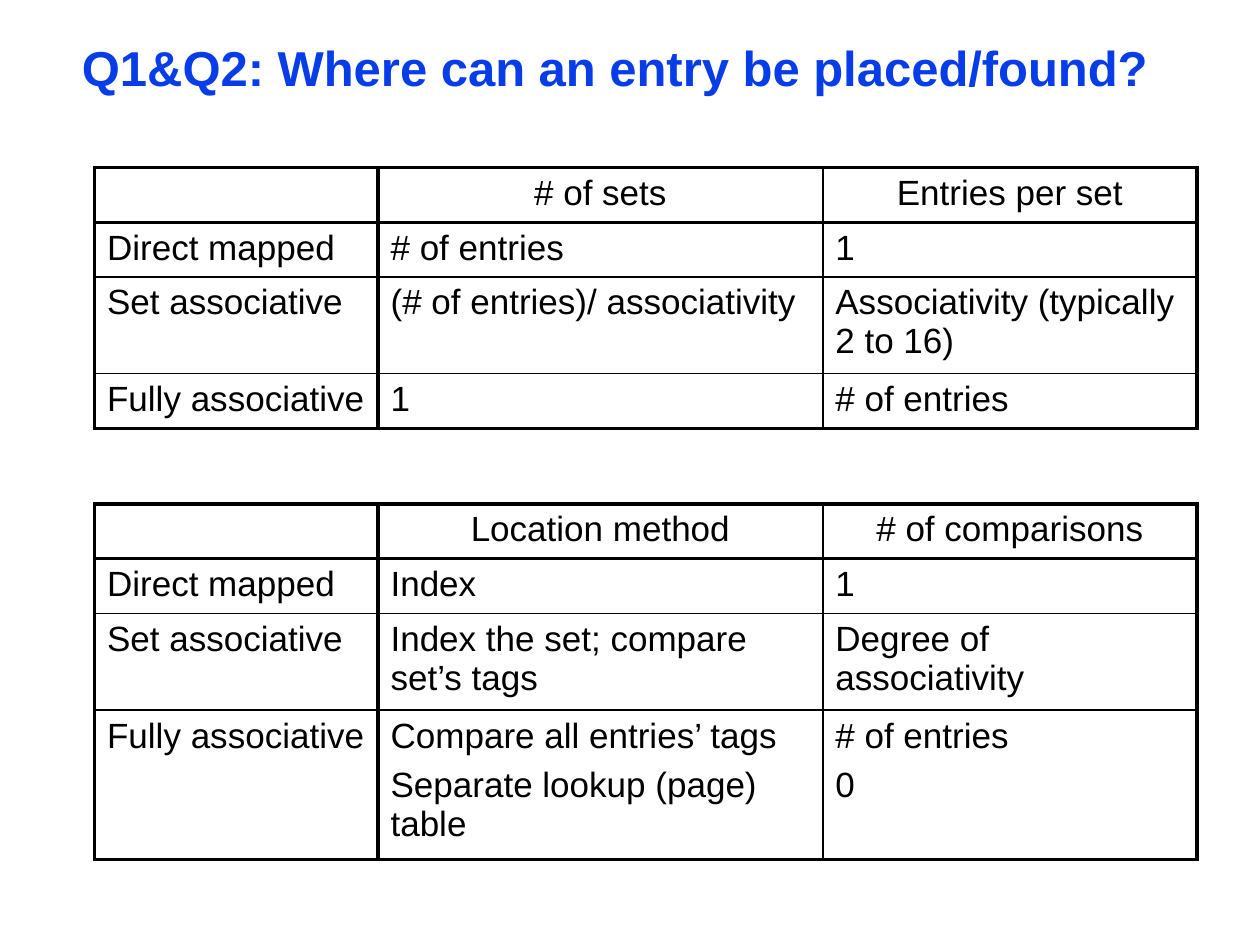
from lxml import etree
from pptx import Presentation
from pptx.dml.color import RGBColor
from pptx.enum.text import MSO_ANCHOR, PP_ALIGN
from pptx.oxml.ns import qn
from pptx.util import Inches, Pt

CENTER, LEFT = PP_ALIGN.CENTER, PP_ALIGN.LEFT
TOP = MSO_ANCHOR.TOP
COLORS = {"title": "063DE8", "ink": "000000"}
FONT = "Arial"
THICK, THIN = 2.25, 1

COLUMN_WIDTHS = [2.25, 3.53, 2.97]
ONE_LINE, TWO_LINES, THREE_LINES = 0.41, 0.72, 1.11
TABLE_LEFT = 0.75

# Each table: top, row heights, cells (a line break starts a new paragraph)
TABLES = [
    (1.33, [ONE_LINE, ONE_LINE, TWO_LINES, ONE_LINE], [
        ["", "# of sets", "Entries per set"],
        ["Direct mapped", "# of entries", "1"],
        ["Set associative", "(# of entries)/ associativity",
         "Associativity (typically 2 to 16)"],
        ["Fully associative", "1", "# of entries"],
    ]),
    (4, [ONE_LINE, ONE_LINE, TWO_LINES, THREE_LINES], [
        ["", "Location method", "# of comparisons"],
        ["Direct mapped", "Index", "1"],
        ["Set associative", "Index the set; compare set’s tags",
         "Degree of associativity"],
        ["Fully associative",
         "Compare all entries’ tags\nSeparate lookup (page) table",
         "# of entries\n0"],
    ]),
]


def write(frame, text, size=20, color="ink", bold=False, align=LEFT,
          line_spacing=None, gap=6):
    for index, line in enumerate(text.split("\n")):
        paragraph = frame.add_paragraph() if index else frame.paragraphs[0]
        paragraph.alignment = align
        paragraph.line_spacing = line_spacing
        if index:
            paragraph.space_before = Pt(gap)
        font = paragraph.font
        if line:
            run = paragraph.add_run()
            run.text = line
            font = run.font
        font.name, font.size, font.bold = FONT, Pt(size), bold
        font.color.rgb = RGBColor.from_string(COLORS[color])


def set_borders(cell, widths):
    """Draw the left, right, top and bottom borders, widths in points."""
    properties = cell._tc.get_or_add_tcPr()
    for index, (side, width) in enumerate(zip("LRTB", widths)):
        border = etree.Element(qn(f"a:ln{side}"), w=str(Pt(width)))
        fill = etree.SubElement(border, qn("a:solidFill"))
        etree.SubElement(fill, qn("a:srgbClr"), val=COLORS["ink"])
        properties.insert(index, border)


prs = Presentation()
prs.slide_width, prs.slide_height = Inches(10), Inches(7.5)
slide = prs.slides.add_slide(prs.slide_layouts[6])

title = slide.shapes.add_textbox(
    Inches(0.58), Inches(0.33), Inches(8.92), Inches(0.46)).text_frame
title.word_wrap = True
title.margin_left = title.margin_right = Inches(0.07)
title.margin_top = title.margin_bottom = Inches(0.03)
write(title, "Q1&Q2: Where can an entry be placed/found?", size=28,
      color="title", bold=True, line_spacing=0.87)

# Lines around the table, below the header and after the labels are thick
column_lines = [THICK, THICK, THIN, THICK]
row_lines = [THICK, THICK, THIN, THIN, THICK]

for top, row_heights, rows in TABLES:
    table = slide.shapes.add_table(
        len(rows), len(COLUMN_WIDTHS), Inches(TABLE_LEFT), Inches(top),
        Inches(sum(COLUMN_WIDTHS)), Inches(sum(row_heights))).table
    table.first_row = table.horz_banding = False
    for column, width in zip(table.columns, COLUMN_WIDTHS):
        column.width = Inches(width)
    for r, (height, texts) in enumerate(zip(row_heights, rows)):
        table.rows[r].height = Inches(height)
        for c, text in enumerate(texts):
            cell = table.cell(r, c)
            cell.fill.background()
            cell.vertical_anchor = TOP
            write(cell.text_frame, text, align=LEFT if r else CENTER)
            set_borders(cell, column_lines[c:c + 2] + row_lines[r:r + 2])

prs.save("out.pptx")
